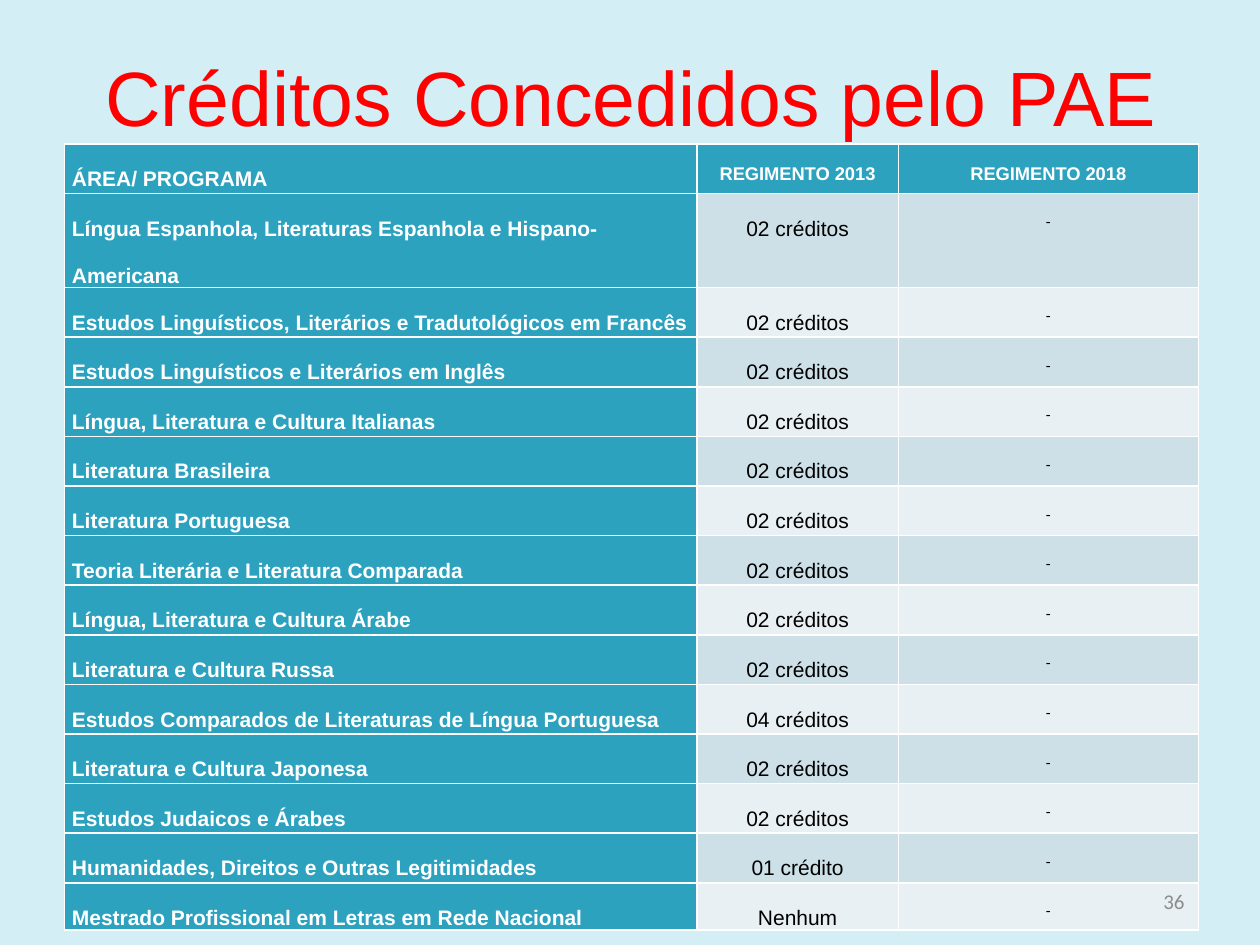
"""Build the slide of PAE credits granted by each programme."""
from pptx import Presentation
from pptx.dml.color import RGBColor
from pptx.enum.text import MSO_ANCHOR, PP_ALIGN
from pptx.util import Cm, Pt

LEFT, CENTER, RIGHT = PP_ALIGN.LEFT, PP_ALIGN.CENTER, PP_ALIGN.RIGHT
MIDDLE = MSO_ANCHOR.MIDDLE
SKY = RGBColor(0xD3, 0xEE, 0xF5)
RED = RGBColor(0xFF, 0x00, 0x00)
TEAL = RGBColor(0x2D, 0xA2, 0xBF)
DARK = RGBColor(0xCD, 0xE0, 0xE8)
PALE = RGBColor(0xE8, 0xF0, 0xF4)
WHITE = RGBColor(0xFF, 0xFF, 0xFF)
BLACK = RGBColor(0x00, 0x00, 0x00)
GRAY = RGBColor(0x8C, 0x8C, 0x8C)

HEADS = ("ÁREA/ PROGRAMA", "REGIMENTO 2013", "REGIMENTO 2018")
AREAS = (
    ("Língua Espanhola, Literaturas Espanhola e Hispano-Americana", "02 créditos"),
    ("Estudos Linguísticos, Literários e Tradutológicos em Francês", "02 créditos"),
    ("Estudos Linguísticos e Literários em Inglês", "02 créditos"),
    ("Língua, Literatura e Cultura Italianas", "02 créditos"),
    ("Literatura Brasileira", "02 créditos"),
    ("Literatura Portuguesa", "02 créditos"),
    ("Teoria Literária e Literatura Comparada", "02 créditos"),
    ("Língua, Literatura e Cultura Árabe", "02 créditos"),
    ("Literatura e Cultura Russa", "02 créditos"),
    ("Estudos Comparados de Literaturas de Língua Portuguesa", "04 créditos"),
    ("Literatura e Cultura Japonesa", "02 créditos"),
    ("Estudos Judaicos e Árabes", "02 créditos"),
    ("Humanidades, Direitos e Outras Legitimidades", "01 crédito"),
    ("Mestrado Profissional em Letras em Rede Nacional", "Nenhum"),
)


def write(frame, text, size, color, align, font="Arial", bold=False):
    line = frame.paragraphs[0]
    line.alignment = align
    run = line.add_run()
    run.text = text
    run.font.size = Pt(size)
    run.font.name = font
    run.font.bold = bold
    run.font.color.rgb = color
    return line


deck = Presentation()
deck.slide_width, deck.slide_height = Cm(25.4), Cm(19.05)
slide = deck.slides.add_slide(deck.slide_layouts[5])
slide.background.fill.solid()
slide.background.fill.fore_color.rgb = SKY

title = slide.shapes.title
title.left, title.top, title.width, title.height = Cm(1.3), Cm(0.33), Cm(22.86), Cm(3.18)
title.text_frame.vertical_anchor = MIDDLE
write(title.text_frame, "Créditos Concedidos pelo PAE", 44, RED, CENTER)

rows = [HEADS] + [(area, credit, "-") for area, credit in AREAS]
table = slide.shapes.add_table(
    len(rows), len(HEADS), Cm(1.3), Cm(2.9), Cm(22.86), Cm(14.87)).table
table.first_col = True
for col, width in zip(table.columns, (12.75, 4.06, 6.05)):
    col.width = Cm(width)
for row in table.rows:
    row.height = Cm(1)
table.rows[len(rows) - 1].height = Cm(0.87)

for r, row in enumerate(rows):
    for c, text in enumerate(row):
        cell = table.cell(r, c)
        cell.margin_left = cell.margin_right = Cm(0.15)
        cell.margin_top = cell.margin_bottom = Cm(0)
        head = r == 0 or c == 0
        cell.fill.solid()
        cell.fill.fore_color.rgb = TEAL if head else DARK if r % 2 else PALE
        size = 12 if c == 0 else 10.5 if r == 0 else (12, 9)[c - 1]
        font = "Calibri" if r and c == 2 else "Arial"
        line = write(cell.text_frame, text, size, WHITE if head else BLACK,
                     CENTER if c else LEFT, font, head)
        line.line_spacing = 2.0

number = slide.shapes.add_textbox(Cm(18.21), Cm(17.65), Cm(5.92), Cm(1.02)).text_frame
number.word_wrap = True
number.vertical_anchor = MIDDLE
write(number, "36", 12, GRAY, RIGHT, "Calibri")

deck.save("out.pptx")
